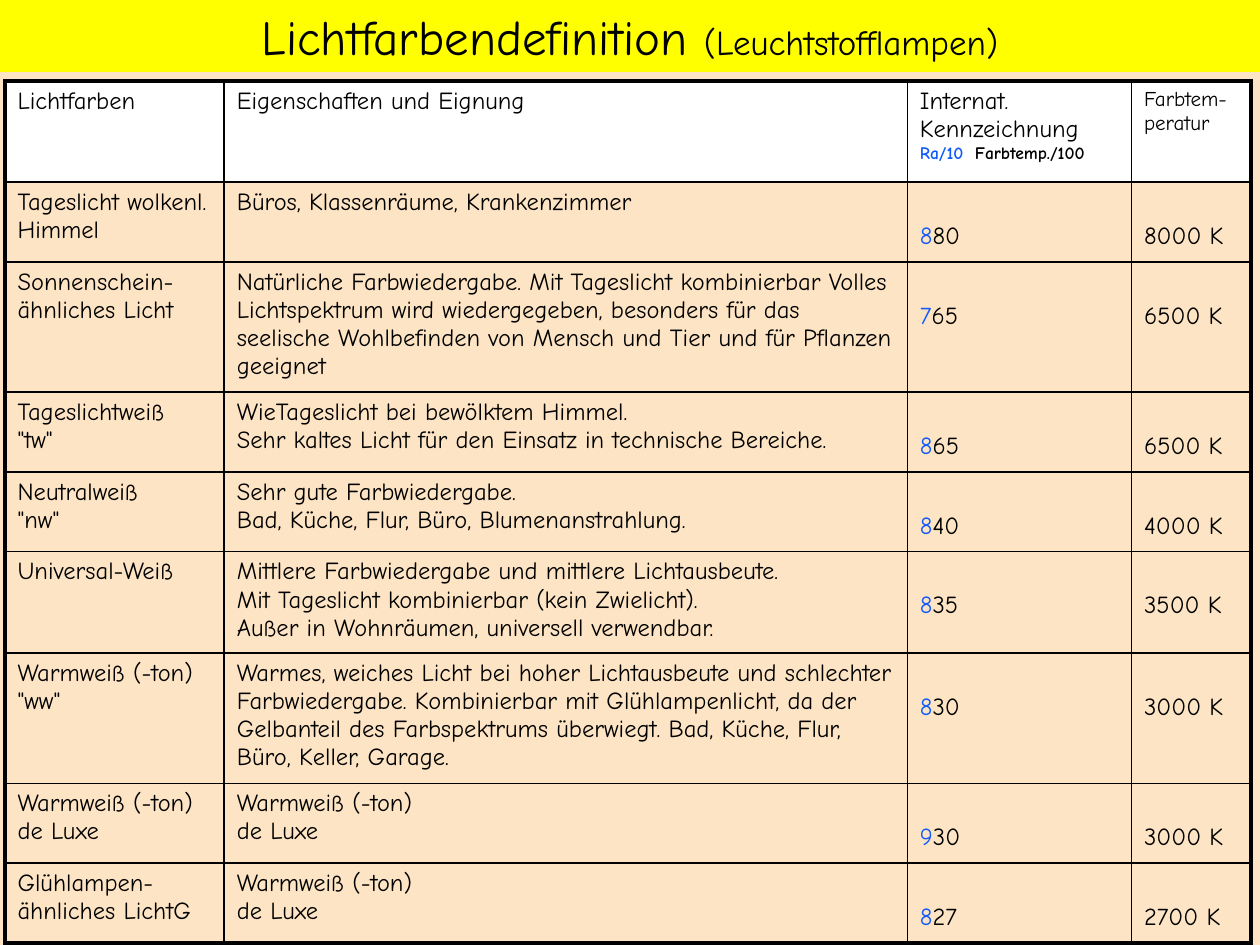
from lxml import etree
from pptx import Presentation
from pptx.dml.color import RGBColor
from pptx.enum.text import MSO_ANCHOR, MSO_AUTO_SIZE, PP_ALIGN
from pptx.oxml.ns import qn
from pptx.util import Cm, Pt

TOP = MSO_ANCHOR.TOP
CENTER = PP_ALIGN.CENTER
NO_AUTOFIT = MSO_AUTO_SIZE.NONE

FONT = "Comic Neue"
COLORS = {"background": "FCE4C4", "banner": "FFFF00", "header": "FFFFFF",
          "text": "000000", "border": "000000", "index": "1159FB"}

HEADERS = [
    [("Lichtfarben", 14, "text", False)],
    [("Eigenschaften und Eignung", 14, "text", False)],
    [("Internat.\nKennzeichnung\n", 14, "text", False),
     ("Ra/10\t", 10, "index", True), ("Farbtemp./100", 10, "text", True)],
    [("Farbtem-\nperatur", 12, "text", False)],
]
LAMPS = [
    ("Tageslicht wolkenl. Himmel", "Büros, Klassenräume, Krankenzimmer", "880", "8000 K"),
    ("Sonnenschein-\nähnliches Licht",
     "Natürliche Farbwiedergabe. Mit Tageslicht kombinierbar Volles Lichtspektrum wird "
     "wiedergegeben, besonders für das seelische Wohlbefinden von Mensch und Tier und für "
     "Pflanzen geeignet", "765", "6500 K"),
    ("Tageslichtweiß\n\"tw\"",
     "WieTageslicht bei bewölktem Himmel.\n"
     "Sehr kaltes Licht für den Einsatz in technische Bereiche.", "865", "6500 K"),
    ("Neutralweiß\n\"nw\"",
     "Sehr gute Farbwiedergabe.\nBad, Küche, Flur, Büro, Blumenanstrahlung.", "840", "4000 K"),
    ("Universal-Weiß",
     "Mittlere Farbwiedergabe und mittlere Lichtausbeute.\n"
     "Mit Tageslicht kombinierbar (kein Zwielicht).\n"
     "Außer in Wohnräumen, universell verwendbar.", "835", "3500 K"),
    ("Warmweiß (-ton)\n\"ww\"",
     "Warmes, weiches Licht bei hoher Lichtausbeute und schlechter Farbwiedergabe. "
     "Kombinierbar mit Glühlampenlicht, da der Gelbanteil des Farbspektrums überwiegt. "
     "Bad, Küche, Flur, Büro, Keller, Garage.", "830", "3000 K"),
    ("Warmweiß (-ton)\nde Luxe", "Warmweiß (-ton)\nde Luxe", "930", "3000 K"),
    ("Glühlampen-\nähnliches LichtG", "Warmweiß (-ton)\nde Luxe", "827", "2700 K"),
]
COL_WIDTHS = [4.42, 13.77, 4.52, 2.41]
ROW_HEIGHTS = [2.04, 1.61, 2.62, 1.61, 1.61, 2.04, 2.63, 1.61, 1.61]


def rgb(name):
    return RGBColor.from_string(COLORS[name])


def add_text(p, text, size, color="text", bold=False):
    for i, line in enumerate(text.split("\n")):
        if i:
            p.add_line_break()
            br = p._p.findall(qn("a:br"))[-1]
            etree.SubElement(br, qn("a:rPr"), sz=str(size * 100))
        if line:
            r = p.add_run()
            r.text = line
            r.font.name = FONT
            r.font.size = Pt(size)
            r.font.bold = bold
            r.font.color.rgb = rgb(color)


def add_tab_stop(p, position):
    tabs = etree.SubElement(p._p.get_or_add_pPr(), qn("a:tabLst"))
    etree.SubElement(tabs, qn("a:tab"), pos=str(position), algn="l")


def set_borders(cell, widths):
    tcPr = cell._tc.get_or_add_tcPr()
    for side, width in zip("LRTB", widths):
        ln = etree.SubElement(tcPr, qn(f"a:ln{side}"), w=str(Pt(width)))
        fill = etree.SubElement(ln, qn("a:solidFill"))
        etree.SubElement(fill, qn("a:srgbClr"), val=COLORS["border"])


def add_banner(s, left, top, width, height):
    sp = s.shapes.title
    sp.left, sp.top, sp.width, sp.height = left, top, width, height
    sp.fill.solid()
    sp.fill.fore_color.rgb = rgb("banner")
    tf = sp.text_frame
    tf.auto_size = NO_AUTOFIT
    tf.word_wrap = True
    tf.vertical_anchor = TOP
    p = tf.paragraphs[0]
    p.alignment = CENTER
    p.line_spacing = 1.0
    add_text(p, "Lichtfarbendefinition ", 28)
    add_text(p, "(Leuchtstofflampen)", 20)


def add_lamp_table(s, left, top):
    rows, cols = len(ROW_HEIGHTS), len(COL_WIDTHS)
    table = s.shapes.add_table(rows, cols, left, top, Cm(sum(COL_WIDTHS)),
                               Cm(sum(ROW_HEIGHTS))).table
    table.first_row = table.horz_banding = False
    for column, width in zip(table.columns, COL_WIDTHS):
        column.width = Cm(width)
    for row, height in zip(table.rows, ROW_HEIGHTS):
        row.height = Cm(height)

    contents = [HEADERS]
    for name, use, code, temperature in LAMPS:
        contents.append([
            [(name, 14)], [(use, 14)],
            [(code[0], 14, "index"), (code[1:], 14)], [(temperature, 14)],
        ])
    for i, row in enumerate(contents):
        for j, runs in enumerate(row):
            cell = table.cell(i, j)
            edges = (j == 0, j == cols - 1, i == 0, i == rows - 1)
            set_borders(cell, [2.25 if edge else 1 for edge in edges])
            if i == 0:
                cell.fill.solid()
                cell.fill.fore_color.rgb = rgb("header")
            else:
                cell.fill.background()
                if j >= 2:
                    cell.margin_top = Cm(0.81)
            p = cell.text_frame.paragraphs[0]
            if i == 0 and j == 2:
                add_tab_stop(p, Cm(1.11))
            for run in runs:
                add_text(p, *run)


def main():
    prs = Presentation()
    prs.slide_width, prs.slide_height = Cm(25.4), Cm(19.05)
    s = prs.slides.add_slide(prs.slide_layouts[5])
    s.background.fill.solid()
    s.background.fill.fore_color.rgb = rgb("background")
    add_banner(s, 0, 0, prs.slide_width, Cm(1.45))
    add_lamp_table(s, Cm(0.1), Cm(1.63))
    prs.save("out.pptx")


if __name__ == "__main__":
    main()
